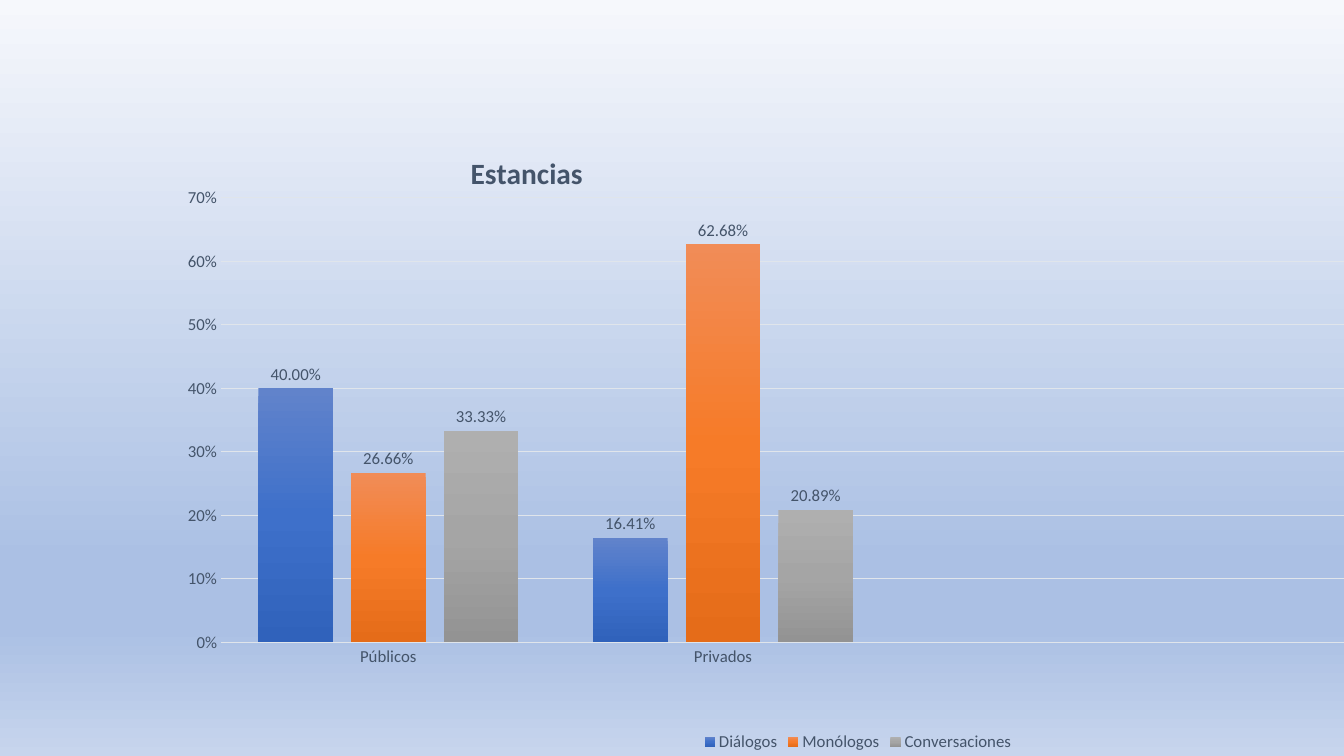
"""Build a slide with a clustered column chart of stays."""
from typing import NamedTuple, Optional

from lxml.etree import SubElement
from pptx import Presentation
from pptx.chart.chart import Chart
from pptx.chart.data import CategoryChartData
from pptx.dml.color import RGBColor
from pptx.dml.fill import FillFormat
from pptx.enum.chart import (
    XL_CHART_TYPE, XL_LABEL_POSITION, XL_LEGEND_POSITION, XL_TICK_MARK)
from pptx.oxml import parse_xml
from pptx.oxml.ns import nsdecls, qn
from pptx.oxml.xmlchemy import BaseOxmlElement
from pptx.slide import Slide
from pptx.text.text import Font
from pptx.util import Pt

PX = 9525
FONT_NAME = "Calibri"
TEXT = RGBColor(0x44, 0x54, 0x6A)
GRID = RGBColor(0xE0, 0xE5, 0xEB)
ICE = RGBColor(0xF6, 0xF8, 0xFC)
SKY = RGBColor(0xAB, 0xC0, 0xE4)
MIST = RGBColor(0xC7, 0xD5, 0xED)
BLUES = (RGBColor(0x61, 0x83, 0xCB), RGBColor(0x3E, 0x70, 0xCA), RGBColor(0x30, 0x62, 0xBB))
ORANGES = (RGBColor(0xF1, 0x8C, 0x57), RGBColor(0xF6, 0x7B, 0x28), RGBColor(0xE5, 0x6C, 0x19))
GRAYS = (RGBColor(0xAF, 0xAF, 0xAF), RGBColor(0xA5, 0xA5, 0xA5), RGBColor(0x93, 0x93, 0x93))


class Stop(NamedTuple):
    """A gradient stop, with its position in percent."""
    position: int
    color: RGBColor


class ColumnSeries(NamedTuple):
    """One series of columns."""
    name: str
    values: tuple[Optional[float], ...]
    colors: tuple[RGBColor, ...]


BACKGROUND = (Stop(0, ICE), Stop(74, SKY), Stop(83, SKY), Stop(100, MIST))
CATEGORIES = ("Públicos", "Privados", "", "")
SERIES = (
    ColumnSeries("Diálogos", (0.4, 0.1641, None, None), BLUES),
    ColumnSeries("Monólogos", (0.2666, 0.6268, None, None), ORANGES),
    ColumnSeries("Conversaciones", (0.3333, 0.2089, None, None), GRAYS),
)


def set_gradient(fill: FillFormat, owner: BaseOxmlElement, stops: tuple[Stop, ...]) -> None:
    """Fill the owner from top to bottom with the given stops."""
    fill.gradient()
    fill.gradient_angle = 270
    stop_list = owner.find(f".//{qn('a:gsLst')}")
    for old_stop in list(stop_list):
        stop_list.remove(old_stop)
    for stop in stops:
        element = SubElement(stop_list, qn("a:gs"), pos=str(stop.position * 1000))
        SubElement(element, qn("a:srgbClr"), val=str(stop.color))


def set_layout(owner: BaseOxmlElement, index: int, **fractions: float) -> None:
    """Place a chart part by fractions of the chart's size."""
    for old_layout in owner.findall(qn("c:layout")):
        owner.remove(old_layout)
    layout = parse_xml(f"<c:layout {nsdecls('c')}><c:manualLayout/></c:layout>")
    manual = layout[0]
    if "w" in fractions:
        SubElement(manual, qn("c:layoutTarget"), val="inner")
    for axis in "xy":
        SubElement(manual, qn(f"c:{axis}Mode"), val="edge")
    for name, fraction in fractions.items():
        SubElement(manual, qn(f"c:{name}"), val=str(fraction))
    owner.insert(index, layout)


def set_font(font: Font, size: int = 12, bold: bool = False) -> None:
    """Apply the chart's type style."""
    font.name = FONT_NAME
    font.size = Pt(size)
    font.bold = bold
    font.color.rgb = TEXT


def add_column_chart(slide: Slide) -> Chart:
    """Add the chart with its coloured and labelled columns."""
    data = CategoryChartData(number_format="0.00%")
    data.categories = CATEGORIES
    for item in SERIES:
        data.add_series(item.name, item.values)
    frame = slide.shapes.add_chart(
        XL_CHART_TYPE.COLUMN_CLUSTERED, 149 * PX, 116 * PX, 1337 * PX, 604 * PX, data)
    chart = frame.chart
    set_font(chart.font)
    plot = chart.plots[0]
    plot.gap_width = 100
    plot.overlap = -24
    plot.vary_by_categories = False
    elements = chart.element.findall(f".//{qn('c:ser')}")
    for item, series, element in zip(SERIES, plot.series, elements):
        stops = tuple(Stop(50 * index, color) for index, color in enumerate(item.colors))
        set_gradient(series.format.fill, element, stops)
        labels = series.data_labels
        labels.show_value = True
        labels.position = XL_LABEL_POSITION.OUTSIDE_END
        labels.number_format = "0.00%"
        labels.number_format_is_linked = False
        set_font(labels.font)
    set_layout(chart.element.find(f".//{qn('c:plotArea')}"), 0, x=0.046, y=0.12, w=0.954, h=0.701)
    return chart


def style_axes(chart: Chart) -> None:
    """Set the axes, gridlines and tick labels."""
    for axis in (chart.category_axis, chart.value_axis):
        axis.major_tick_mark = XL_TICK_MARK.NONE
        axis.minor_tick_mark = XL_TICK_MARK.NONE
        set_font(axis.tick_labels.font)
    value_axis = chart.value_axis
    value_axis.minimum_scale = 0
    value_axis.maximum_scale = 0.7
    value_axis.major_unit = 0.1
    value_axis.tick_labels.number_format = "0%"
    value_axis.tick_labels.number_format_is_linked = False
    value_axis.format.line.fill.background()
    for line in (chart.category_axis.format.line, value_axis.major_gridlines.format.line):
        line.color.rgb = GRID
        line.width = Pt(0.75)


def add_title_and_legend(chart: Chart) -> None:
    """Add the chart title and the legend below."""
    chart.has_title = True
    title = chart.chart_title
    title.include_in_layout = False
    title.text_frame.text = "Estancias"
    set_font(title.text_frame.paragraphs[0].font, 21, True)
    set_layout(title.element, 1, x=0.22, y=0.04)
    chart.has_legend = True
    chart.legend.position = XL_LEGEND_POSITION.BOTTOM
    chart.legend.include_in_layout = False
    set_font(chart.legend.font)


def main() -> None:
    """Build and save the presentation."""
    presentation = Presentation()
    presentation.slide_width = 1280 * PX
    presentation.slide_height = 720 * PX
    slide = presentation.slides.add_slide(presentation.slide_layouts[6])
    set_gradient(slide.background.fill, slide.element, BACKGROUND)
    chart = add_column_chart(slide)
    style_axes(chart)
    add_title_and_legend(chart)
    presentation.save("out.pptx")


if __name__ == "__main__":
    main()
